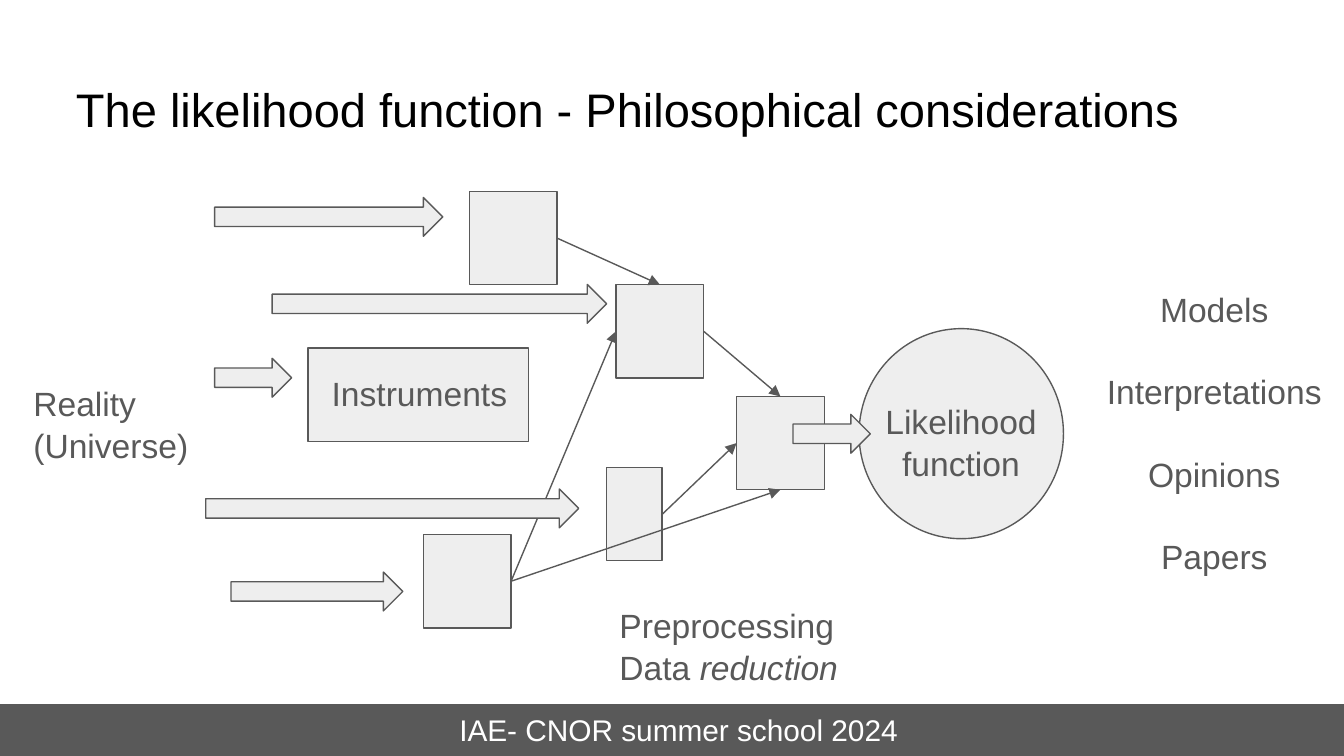
from lxml import etree
from pptx import Presentation
from pptx.dml.color import RGBColor
from pptx.enum.shapes import MSO_CONNECTOR, MSO_SHAPE
from pptx.enum.text import MSO_ANCHOR, PP_ALIGN
from pptx.oxml.ns import qn
from pptx.util import Pt

COLORS = {"fill": "EEEEEE", "gray": "595959", "title": "000000", "footer": "FFFFFF"}
COLORS = {name: RGBColor.from_string(value) for name, value in COLORS.items()}
TOP, LEFT, BOTTOM, RIGHT = range(4)  # connection sites of a rectangle

prs = Presentation()
prs.slide_width, prs.slide_height = Pt(720), Pt(405)
s = prs.slides.add_slide(prs.slide_layouts[5])


def add_block(kind, x, y, w, h, fill="fill"):
    sp = s.shapes.add_shape(kind, Pt(x), Pt(y), Pt(w), Pt(h))
    sp.shadow.inherit = False
    sp.fill.solid()
    sp.fill.fore_color.rgb = COLORS[fill]
    sp.line.color.rgb = COLORS["gray"]
    sp.line.width = Pt(0.75)
    return sp


def format_text(sp, size, color, align=PP_ALIGN.LEFT, spacing=1.0, gap=0):
    tf = sp.text_frame
    tf.word_wrap = True
    tf.margin_left = tf.margin_right = tf.margin_top = tf.margin_bottom = Pt(7.2)
    for i, p in enumerate(tf.paragraphs):
        p.alignment = align
        p.line_spacing = spacing
        p.space_before = Pt(gap if i else 0)
        for r in p.runs:
            r.font.name = "Arial"
            r.font.size = Pt(size)
            r.font.color.rgb = COLORS[color]


# Title
title = s.shapes.title
title.left, title.top, title.width, title.height = Pt(33.5), Pt(35.3), Pt(671), Pt(45.4)
title.text_frame.text = "The likelihood function - Philosophical considerations"
title.text_frame.vertical_anchor = MSO_ANCHOR.MIDDLE
format_text(title, 25.2, "title")

# Likelihood circle, instruments and processing steps
add_block(MSO_SHAPE.FLOWCHART_CONNECTOR, 460.2, 176.1, 109.5, 112.5)
steps = {}
for name, x, y, w in [
    ("instruments", 165, 186.5, 118),
    ("final", 394.6, 212.4, 47),
    ("lower", 226.8, 286.4, 47),
    ("upper", 251.5, 102.6, 47),
    ("narrow", 324.8, 250.5, 30),
    ("middle", 330, 152.5, 47),
]:
    steps[name] = add_block(MSO_SHAPE.RECTANGLE, x, y, w, 50)

# Labels
for text, x, y, w, h, align, gap in [
    ("Models\nInterpretations\nOpinions\nPapers", 571, 146.9, 159, 111, PP_ALIGN.CENTER, 21.6),
    ("Reality (Universe)", 10.8, 197.3, 101.5, 38, PP_ALIGN.LEFT, 0),
    ("Instruments", 170.6, 191.5, 159, 38, PP_ALIGN.LEFT, 0),
    ("Likelihood function", 455.8, 206.6, 118, 38, PP_ALIGN.CENTER, 0),
    ("Preprocessing\nData ", 324.8, 316, 191.5, 38, PP_ALIGN.LEFT, 0),
]:
    label = s.shapes.add_textbox(Pt(x), Pt(y), Pt(w), Pt(h))
    label.text_frame.text = text
    if text.endswith("Data "):
        r = label.text_frame.paragraphs[-1].add_run()
        r.text = "reduction"
        r.font.italic = True
    format_text(label, 18, "gray", align, 1.04, gap)

# Links between steps
for start, end, site in [
    ("upper", "middle", TOP),
    ("middle", "final", TOP),
    ("narrow", "final", LEFT),
    ("lower", "middle", LEFT),
    ("lower", "final", BOTTOM),
]:
    link = s.shapes.add_connector(MSO_CONNECTOR.STRAIGHT, 0, 0, 0, 0)
    link.begin_connect(steps[start], RIGHT)
    link.end_connect(steps[end], site)
    link.line.color.rgb = COLORS["gray"]
    link.line.width = Pt(0.75)
    etree.SubElement(link.line._get_or_add_ln(), qn("a:tailEnd"), type="triangle")
    etree.SubElement(link._element.spPr, qn("a:effectLst"))

# Block arrows
for x, y, w in [
    (115, 105.8, 122.2),
    (115, 192, 41.2),
    (110.2, 262, 199.8),
    (123.8, 306.5, 92),
    (145.8, 152.4, 179.2),
    (424.8, 222, 41.4),
]:
    add_block(MSO_SHAPE.RIGHT_ARROW, x, y, w, 20.8)

# Footer
band = add_block(MSO_SHAPE.RECTANGLE, 0, 377.2, 720, 27.8, "gray")
band.line.fill.background()
footer = s.shapes.add_textbox(Pt(82.8), Pt(374), Pt(561.6), Pt(29))
footer.text_frame.text = "IAE- CNOR summer school 2024"
format_text(footer, 16, "footer", PP_ALIGN.CENTER)

prs.save("out.pptx")
